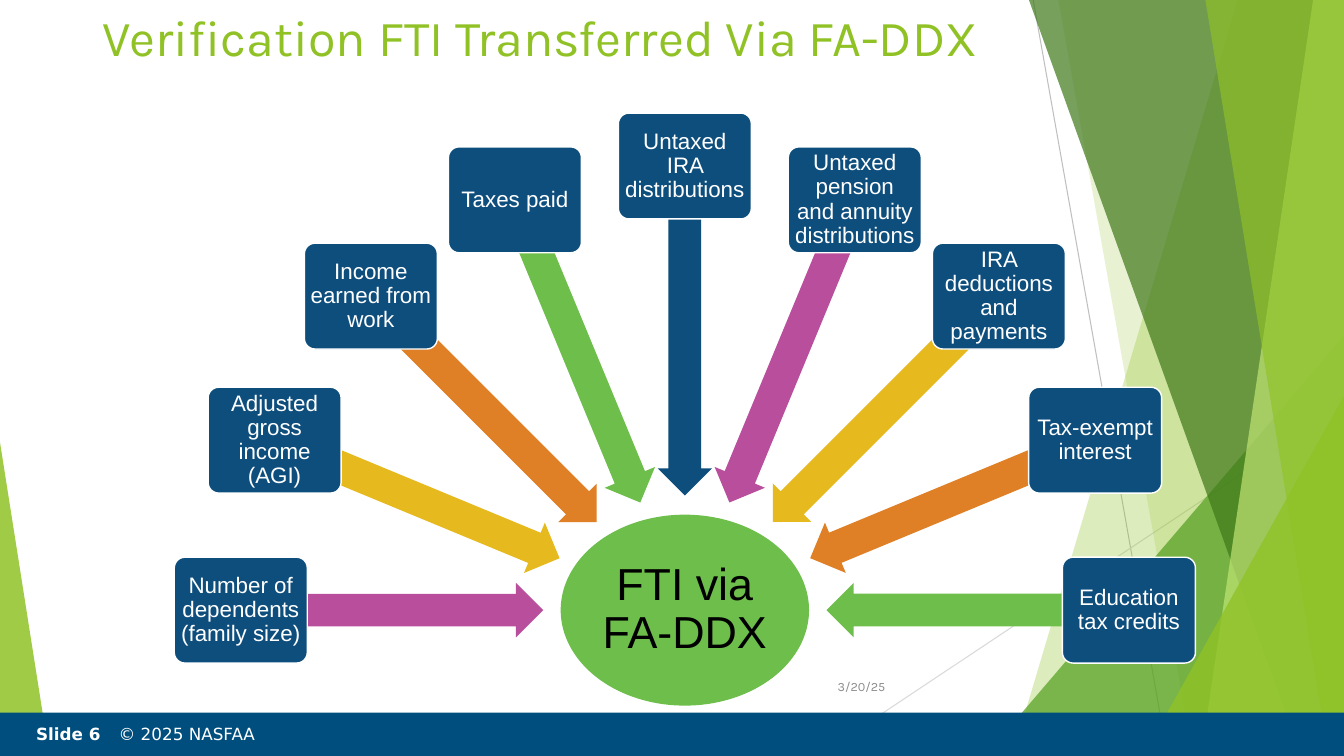
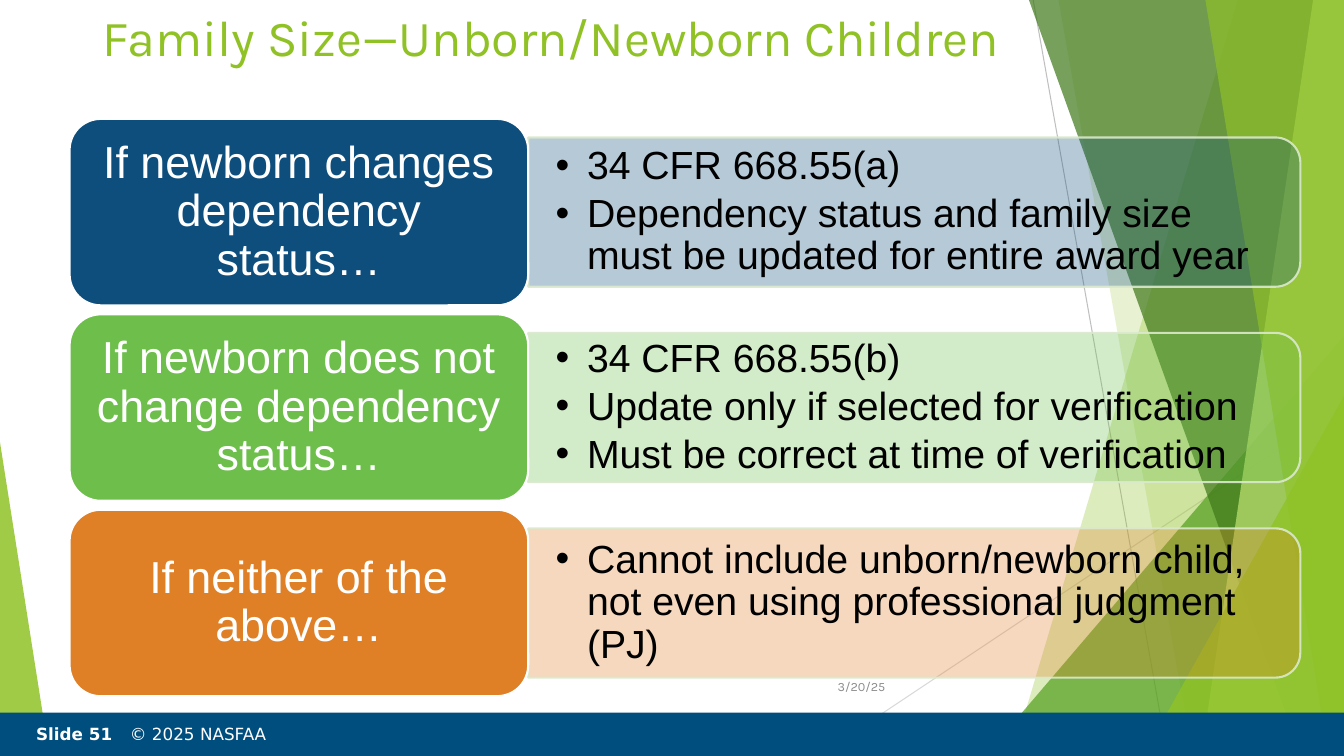
import math
import lxml.etree
import pptx
import pptx.dml.color
import pptx.enum.shapes
import pptx.enum.text
import pptx.oxml.ns
import pptx.util

Pt = pptx.util.Pt
RGBColor = pptx.dml.color.RGBColor
SHAPE = pptx.enum.shapes.MSO_SHAPE
ALIGN = pptx.enum.text.PP_ALIGN
ANCHOR = pptx.enum.text.MSO_ANCHOR
qn = pptx.oxml.ns.qn

WHITE = RGBColor(0xFF, 0xFF, 0xFF)
BLACK = RGBColor(0x00, 0x00, 0x00)
LIME = RGBColor(0x90, 0xC2, 0x26)
PALE_LIME = RGBColor(0xC0, 0xE4, 0x74)
LEAF = RGBColor(0x54, 0xA0, 0x21)
FOREST = RGBColor(0x3F, 0x78, 0x19)
MINT = RGBColor(0xDB, 0xE9, 0xCD)
FOOTER_BLUE = RGBColor(0x00, 0x4E, 0x7D)
BLUE = RGBColor(0x0E, 0x4E, 0x7D)
GREEN = RGBColor(0x6D, 0xBE, 0x4B)
ORANGE = RGBColor(0xDF, 0x7F, 0x26)
YELLOW = RGBColor(0xE6, 0xB9, 0x1E)
MAGENTA = RGBColor(0xB9, 0x4F, 0x9C)
GREY = RGBColor(0x8C, 0x8C, 0x8C)
LINE_GREY = RGBColor(0xBF, 0xBF, 0xBF)
PALE_GREY = RGBColor(0xD9, 0xD9, 0xD9)

WIDTH, HEIGHT = 960, 540


def paint(shape, color, opacity=100, line=None, line_width=1, line_opacity=100):
    shape.shadow.inherit = False
    shape.fill.solid()
    shape.fill.fore_color.rgb = color
    fills = [(shape.fill, opacity)]
    if line is None:
        shape.line.fill.background()
    else:
        shape.line.color.rgb = line
        shape.line.width = Pt(line_width)
        fills.append((shape.line.fill, line_opacity))
    solids = shape._element.spPr.findall(".//" + qn("a:solidFill"))
    for solid, (_, percent) in zip(solids, fills):
        if percent < 100:
            alpha = lxml.etree.SubElement(solid[0], qn("a:alpha"))
            alpha.set("val", str(percent * 1000))


def write(shape, paragraphs, size, font, color, align=ALIGN.LEFT, anchor=ANCHOR.MIDDLE,
          margins=(7.2, 3.6), spacing=None, after=0, bullet_indent=0, tab=0):
    frame = shape.text_frame
    frame.word_wrap = True
    frame.auto_size = pptx.enum.text.MSO_AUTO_SIZE.NONE
    frame.vertical_anchor = anchor
    frame.margin_left = frame.margin_right = Pt(margins[0])
    frame.margin_top = frame.margin_bottom = Pt(margins[1])
    for index, runs in enumerate(paragraphs):
        paragraph = frame.add_paragraph() if index else frame.paragraphs[0]
        properties = paragraph._p.get_or_add_pPr()
        if bullet_indent:
            properties.set("marL", str(Pt(bullet_indent)))
            properties.set("indent", str(-Pt(bullet_indent)))
            lxml.etree.SubElement(properties, qn("a:buFont")).set("typeface", "Arial")
            lxml.etree.SubElement(properties, qn("a:buChar")).set("char", "•")
        if tab:
            tabs = lxml.etree.SubElement(properties, qn("a:tabLst"))
            stop = lxml.etree.SubElement(tabs, qn("a:tab"))
            stop.set("pos", str(Pt(tab)))
            stop.set("algn", "l")
        paragraph.alignment = align
        if spacing:
            paragraph.line_spacing = spacing
        paragraph.space_after = Pt(after)
        for text, bold in runs:
            run = paragraph.add_run()
            run.text = text
            run.font.size = Pt(size)
            run.font.name = font
            run.font.bold = bold
            run.font.color.rgb = color


presentation = pptx.Presentation()
presentation.slide_width = Pt(WIDTH)
presentation.slide_height = Pt(HEIGHT)

thin_lines = [((738, 0), (834, HEIGHT), LINE_GREY), ((WIDTH, 290), (584.5, HEIGHT), PALE_GREY)]
facets = [
    ("band", (884, 723), LIME, 30),
    ("band", (756, 852), LIME, 20),
    ("triangle", (703.5, 240, 256.5, 1), LEAF, 72),
    ("band", (735, 929.5), FOREST, 70),
    ("band", (938, 858), PALE_LIME, 70),
    ("band", (861, 949), LIME, 65),
    ("triangle", (816.5, 283, 143.5, 1), LIME, 80),
    ("triangle", (0, 316, 35.3, 0), LIME, 85),
]
titles = [("6", "Verification FTI Transferred Via FA-DDX"),
          ("51", "Family Size—Unborn/Newborn Children")]

for number, title_text in titles:
    slide = presentation.slides.add_slide(presentation.slide_layouts[5])
    shapes = slide.shapes

    for start, end, color in thin_lines:
        connector = shapes.add_connector(pptx.enum.shapes.MSO_CONNECTOR.STRAIGHT,
                                         Pt(start[0]), Pt(start[1]), Pt(end[0]), Pt(end[1]))
        connector.line.color.rgb = color
        connector.line.width = Pt(0.75)
        lxml.etree.SubElement(connector._element.spPr, qn("a:effectLst"))

    for kind, measures, color, opacity in facets:
        if kind == "band":
            top_x, bottom_x = measures
            builder = shapes.build_freeform(Pt(top_x), Pt(0))
            builder.add_line_segments([(Pt(WIDTH), Pt(0)), (Pt(WIDTH), Pt(HEIGHT)),
                                       (Pt(bottom_x), Pt(HEIGHT))])
            facet = builder.convert_to_shape()
        else:
            left, top, width, apex = measures
            facet = shapes.add_shape(SHAPE.ISOSCELES_TRIANGLE, Pt(left), Pt(top),
                                     Pt(width), Pt(HEIGHT - top))
            facet.adjustments[0] = apex
        paint(facet, color, opacity)

    footer = shapes.add_shape(SHAPE.RECTANGLE, Pt(0), Pt(509), Pt(WIDTH), Pt(31))
    paint(footer, FOOTER_BLUE)
    footer_text = shapes.add_textbox(Pt(18.7), Pt(504.7), Pt(272), Pt(39))
    write(footer_text, [[("Slide " + number, True), ("\t© 2025 NASFAA", False)]],
          12, "DejaVu Sans", WHITE, tab=51 + 8 * len(number))

    date = shapes.add_textbox(Pt(567.4), Pt(476), Pt(72), Pt(29))
    write(date, [[("3/20/25", False)]], 9, "Karla", GREY, ALIGN.RIGHT)

    title = shapes.title
    title.left, title.top, title.width, title.height = Pt(66), Pt(0.7), Pt(828), Pt(104.4)
    write(title, [[(title_text, False)]], 36, "Karla", LIME, anchor=ANCHOR.TOP)

sources_slide, family_slide = presentation.slides

center_x, center_y, radius = 489.2, 435.8, 317.2
box_width, box_height = 95, 75.6
arrow_height = 38.9
arrow_lengths = [216, 220.3, 228.2, 234, 235.4]
arrow_colors = [MAGENTA, YELLOW, ORANGE, GREEN, BLUE]
items = [
    "Number of dependents (family size)",
    "Adjusted gross income (AGI)",
    "Income earned from work",
    "Taxes paid",
    "Untaxed IRA distributions",
    "Untaxed pension and annuity distributions",
    "IRA deductions and payments",
    "Tax-exempt interest",
    "Education tax credits",
]

shapes = sources_slide.shapes
hub = shapes.add_shape(SHAPE.OVAL, Pt(center_x - 88.2), Pt(center_y - 67.7), Pt(176.4), Pt(135.4))
paint(hub, GREEN, line=GREEN)
write(hub, [[("FTI via FA-DDX", False)]], 32, "Arial", BLACK, ALIGN.CENTER,
      margins=(1.6, 1.6), spacing=0.9)

for index, item in enumerate(items):
    turn = 180 + 22.5 * index
    across, down = math.cos(math.radians(turn)), math.sin(math.radians(turn))
    length = arrow_lengths[min(index, len(items) - 1 - index)]
    distance = radius - length / 2
    arrow = shapes.add_shape(SHAPE.LEFT_ARROW,
                             Pt(center_x + distance * across - length / 2),
                             Pt(center_y + distance * down - arrow_height / 2),
                             Pt(length), Pt(arrow_height))
    arrow.adjustments[0] = 0.6
    arrow.adjustments[1] = 0.5
    arrow.rotation = turn % 360
    paint(arrow, arrow_colors[index % len(arrow_colors)])

    box = shapes.add_shape(SHAPE.ROUNDED_RECTANGLE,
                           Pt(center_x + radius * across - box_width / 2),
                           Pt(center_y + radius * down - box_height / 2),
                           Pt(box_width), Pt(box_height))
    box.adjustments[0] = 0.1
    paint(box, BLUE, line=WHITE)
    write(box, [[(item, False)]], 16, "Arial", WHITE, ALIGN.CENTER,
          margins=(2.2, 2.2), spacing=0.9)

rows = [
    (BLUE, "If newborn changes dependency status…",
     ["34 CFR 668.55(a)",
      "Dependency status and family size must be updated for entire award year"]),
    (GREEN, "If newborn does not change dependency status…",
     ["34 CFR 668.55(b)", "Update only if selected for verification",
      "Must be correct at time of verification"]),
    (ORANGE, "If neither of the above…",
     ["Cannot include unborn/newborn child, not even using professional judgment (PJ)"]),
]
label_left, label_width, label_height = 49.7, 327.6, 133.2
panel_left = label_left + label_width
panel_width, panel_height = 551.5, 106.6

shapes = family_slide.shapes
for index, (color, condition, rules) in enumerate(rows):
    middle = 151.5 + 139.6 * index
    panel = shapes.add_shape(SHAPE.ROUND_2_SAME_RECTANGLE,
                             Pt(panel_left + (panel_width - panel_height) / 2),
                             Pt(middle - panel_width / 2), Pt(panel_height), Pt(panel_width))
    panel.rotation = 90
    paint(panel, color, 30, MINT, 1.5, 90)

    rules_box = shapes.add_textbox(Pt(panel_left), Pt(middle - 48), Pt(546.5), Pt(96))
    write(rules_box, [[(rule, False)] for rule in rules], 28, "Arial", BLACK,
          margins=(19.5, 10), spacing=0.9, after=4, bullet_indent=22.5)

    label = shapes.add_shape(SHAPE.ROUNDED_RECTANGLE, Pt(label_left), Pt(middle - label_height / 2),
                             Pt(label_width), Pt(label_height))
    paint(label, color, line=WHITE, line_width=1.5)
    write(label, [[(condition, False)]], 32, "Arial", WHITE, ALIGN.CENTER,
          margins=(9.6, 4.8), spacing=0.9)

presentation.save("out.pptx")
